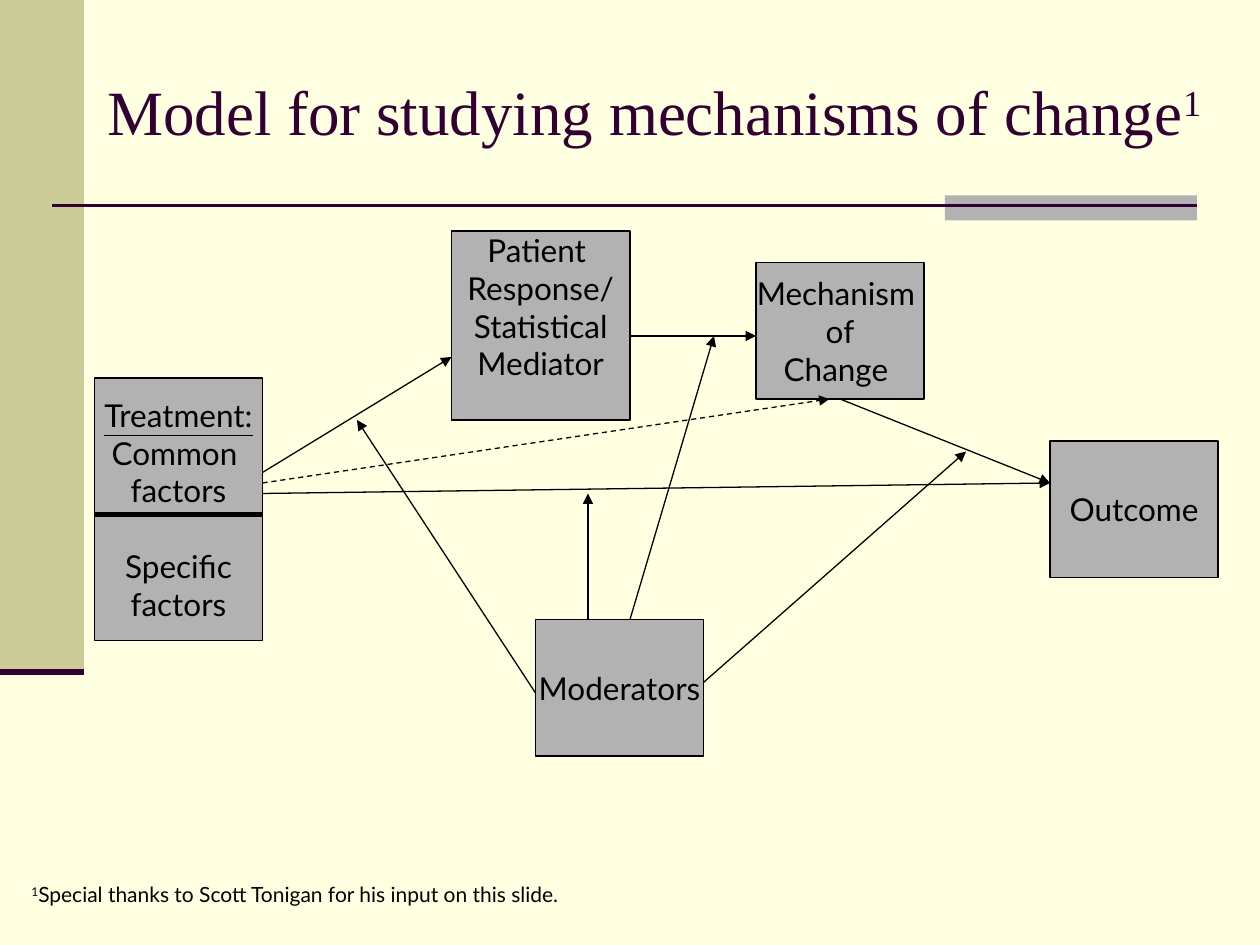
from lxml.etree import SubElement
from pptx import Presentation
from pptx.dml.color import RGBColor
from pptx.enum.dml import MSO_LINE
from pptx.enum.shapes import MSO_CONNECTOR, MSO_SHAPE
from pptx.enum.text import MSO_ANCHOR, MSO_AUTO_SIZE, PP_ALIGN
from pptx.oxml.ns import qn
from pptx.util import Inches, Pt

COLORS = {"paper": "FFFFE1", "panel": "CCCC99", "box": "B2B2B2",
          "accent": "330033", "ink": "000000"}
BODY_FONT, TITLE_FONT = "Lato", "Times New Roman"
BODY_SIZE, LINE_HEIGHT = 18, 21.6

# All places are in grid units: the slide is 120 columns by 90 rows
COLUMNS, ROWS = 120, 90

TITLE = [("Model for studying mechanisms of change", False), ("1", True)]
FOOTNOTE = [("1", True),
            ("Special thanks to Scott Tonigan for his input on this slide.", False)]

# name: (left, top, width, height), lines of text
BOXES = {
    "moderators": ((51, 59, 16, 13), ["Moderators"]),
    "mechanism": ((72, 25, 16, 13), ["Mechanism ", "of", "Change "]),
    "mediator": ((43, 22, 17, 18),
                 ["Patient ", "Response/", "Statistical", "Mediator"]),
    "treatment": ((9, 36, 16, 25),
                  ["Treatment:", "Common ", "factors", "Specific", "factors"]),
    "outcome": ((100, 42, 16, 13), ["Outcome"]),
}

# start, end, dashed
ARROWS = [
    ((25, 46), (79, 38), True),     # treatment to mechanism
    ((25, 45), (43, 34), False),    # treatment to mediator
    ((60, 32), (72, 32), False),    # mediator to mechanism
    ((80, 38), (100, 46), False),   # mechanism to outcome
    ((51, 66), (34, 40), False),    # moderators to the four paths
    ((60, 59), (68, 32), False),
    ((67, 65), (92, 43), False),
    ((56, 59), (56, 47), False),
    ((25, 47), (100, 46), False),   # treatment to outcome
]

deck = Presentation()
deck.slide_width, deck.slide_height = Inches(10), Inches(7.5)
page = deck.slides.add_slide(deck.slide_layouts[5])


def color(name):
    return RGBColor.from_string(COLORS[name])


def across(columns):
    return round(deck.slide_width * columns / COLUMNS)


def down(rows):
    return round(deck.slide_height * rows / ROWS)


def place(left, top, width, height):
    return across(left), down(top), across(width), down(height)


def add_span(para, text, size, font=BODY_FONT, ink="ink", raised=False):
    span = para.add_run()
    span.text = text
    span.font.size, span.font.name = Pt(size), font
    span.font.color.rgb = color(ink)
    if raised:
        span.font._element.set("baseline", "30000")
    return span


def add_rectangle(area, fill, outlined=False):
    box = page.shapes.add_shape(MSO_SHAPE.RECTANGLE, *place(*area))
    box.shadow.inherit = False
    box.fill.solid()
    box.fill.fore_color.rgb = color(fill)
    if outlined:
        box.line.color.rgb = color("ink")
        box.line.width = Pt(0.75)
    else:
        box.line.fill.background()
    return box


def add_line(start, end, width=0.75, ink="ink", dashed=False, arrow=False):
    line = page.shapes.add_connector(
        MSO_CONNECTOR.STRAIGHT, across(start[0]), down(start[1]),
        across(end[0]), down(end[1]))
    line.line.color.rgb = color(ink)
    line.line.width = Pt(width)
    if dashed:
        line.line.dash_style = MSO_LINE.DASH
    if arrow:
        SubElement(line.line._get_or_add_ln(), qn("a:tailEnd"), type="triangle")
    SubElement(line._element.spPr, qn("a:effectLst"))
    return line


# Background and decoration
page.background.fill.solid()
page.background.fill.fore_color.rgb = color("paper")
add_rectangle((0, 0, 8, 64), "panel")
add_rectangle((90, 18.6, 24, 2.4), "box")
add_line((5, 19.6), (114, 19.6), 1.5, "accent")
add_line((0, 64), (8, 64), 3.5, "accent")

# Title
title = page.shapes.title
title.left, title.top, title.width, title.height = place(9, 3, 120, 15)
frame = title.text_frame
frame.auto_size, frame.word_wrap = MSO_AUTO_SIZE.NONE, True
frame.vertical_anchor = MSO_ANCHOR.MIDDLE
frame.paragraphs[0].alignment = PP_ALIGN.LEFT
for text, raised in TITLE:
    add_span(frame.paragraphs[0], text, 36, TITLE_FONT, "accent", raised)

# Model boxes
boxes = {}
for name, (area, lines) in BOXES.items():
    boxes[name] = box = add_rectangle(area, "box", outlined=True)
    frame = box.text_frame
    frame.word_wrap = False
    frame.vertical_anchor = MSO_ANCHOR.MIDDLE
    for index, text in enumerate(lines):
        para = frame.paragraphs[0] if index == 0 else frame.add_paragraph()
        para.alignment = PP_ALIGN.CENTER
        span = add_span(para, text, BODY_SIZE)
        if text == "Treatment:":
            span.font.underline = True
        if text == "Specific":
            para.space_before = Pt(LINE_HEIGHT)
# The mediator text sits half a line above the middle
boxes["mediator"].text_frame.margin_bottom = Inches(0.05) + Pt(LINE_HEIGHT)

# Arrows and the divider inside the treatment box
for start, end, dashed in ARROWS:
    arrow = add_line(start, end, dashed=dashed, arrow=True)
    if start == (80, 38):
        arrow.begin_connect(boxes["mechanism"], 2)
add_line((9, 49), (25, 49), 3)

# Footnote
note = page.shapes.add_textbox(*place(1.8, 83.4, 54, 3.6))
note.text_frame.word_wrap = False
for text, raised in FOOTNOTE:
    add_span(note.text_frame.paragraphs[0], text, 12, raised=raised)

deck.save("out.pptx")
